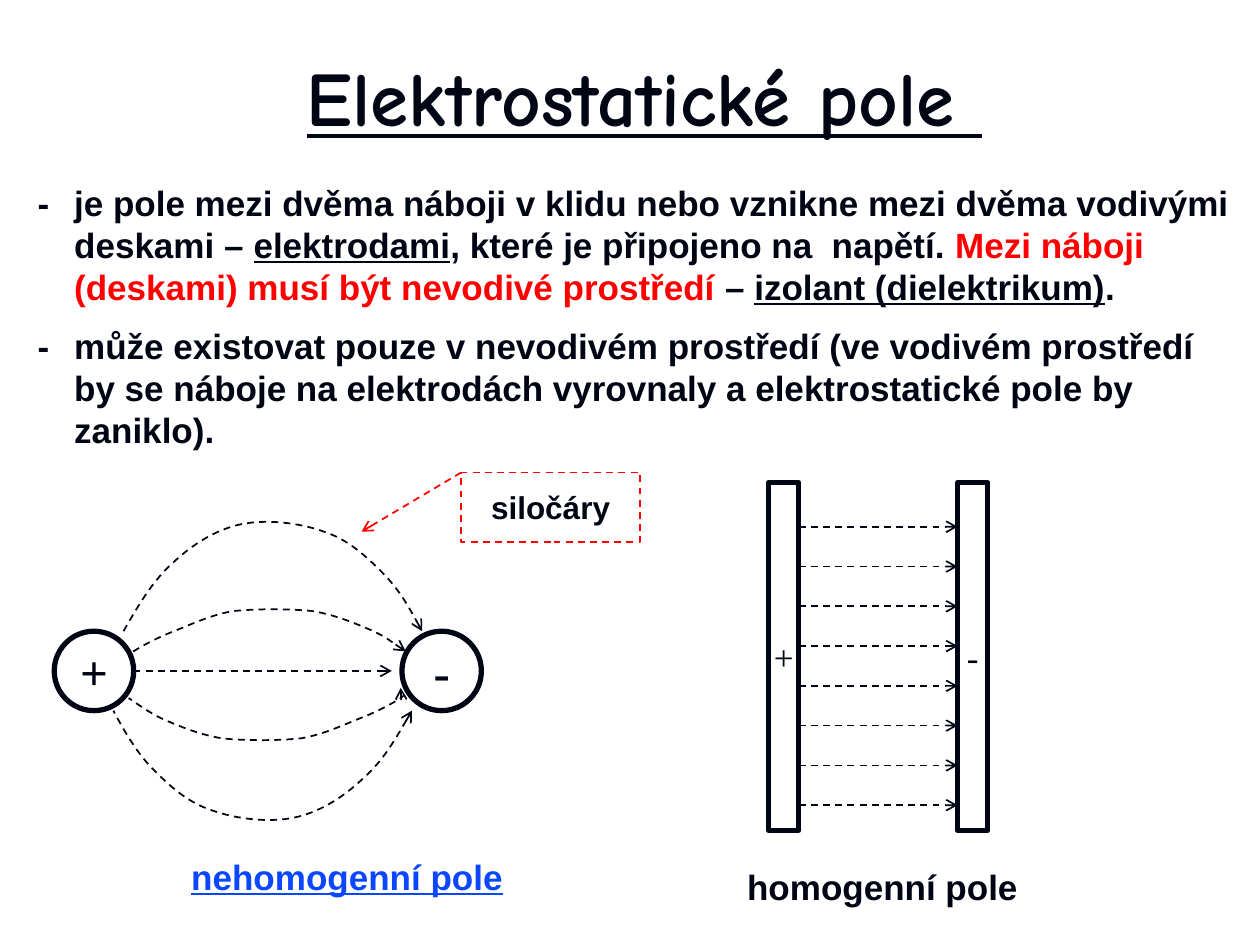
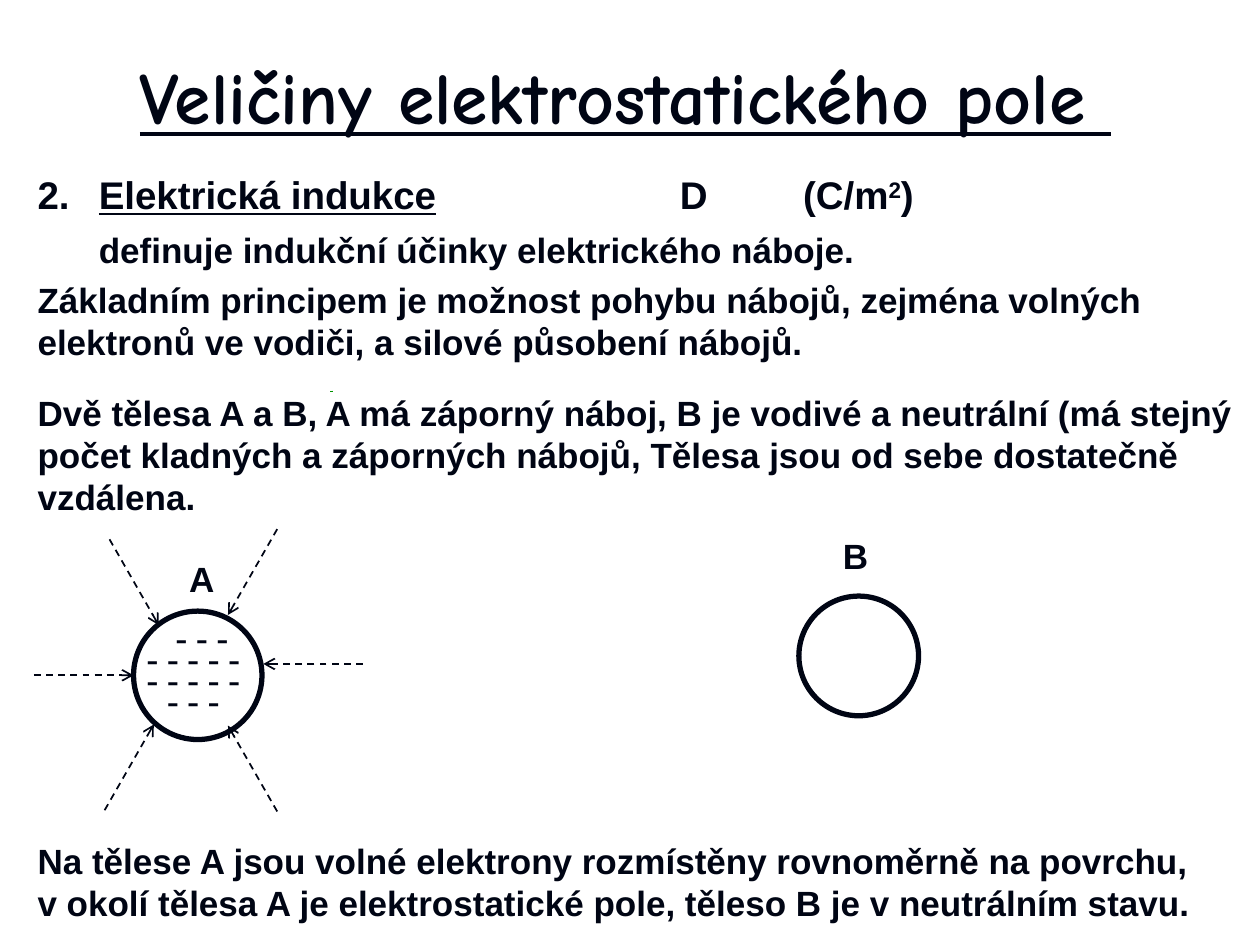
from lxml import etree
from pptx import Presentation
from pptx.dml.color import RGBColor
from pptx.enum.dml import MSO_LINE
from pptx.enum.shapes import MSO_CONNECTOR, MSO_SHAPE
from pptx.enum.text import MSO_ANCHOR, PP_ALIGN
from pptx.oxml.ns import qn
from pptx.util import Pt

DASH = MSO_LINE.DASH
STRAIGHT = MSO_CONNECTOR.STRAIGHT
OVAL, RECT = MSO_SHAPE.OVAL, MSO_SHAPE.RECTANGLE
MIDDLE, TOP = MSO_ANCHOR.MIDDLE, MSO_ANCHOR.TOP
CENTER, LEFT = PP_ALIGN.CENTER, PP_ALIGN.LEFT

COLORS = {"ink": "000514", "red": "FF0000", "blue": "0A47FE", "green": "009300"}
BODY = {"name": "Arial", "size": 20, "bold": True, "color": "ink"}
SIGN = {**BODY, "name": "Times New Roman", "size": 28}
PLATE = {**SIGN, "size": 20, "bold": False}
TITLE = {**BODY, "name": "Comic Neue", "size": 44, "underline": True}
UNDER = {"underline": True}
TIGHT = 2.9
HANGING = 20.9

OUTER_LINE = [
    (70.6, 360.7), (79.2, 345.6), (87.8, 331.2), (99.4, 321.1),
    (110.2, 311), (123.8, 302.4), (138.2, 299.5),
    (152.6, 296.6), (171.4, 298.8), (185, 303.8),
    (198.7, 308.2), (208.8, 317.5), (218.2, 326.9),
    (227.5, 336.2), (234.7, 348.5), (241.2, 360.7)]
INNER_LINE = [
    (76.3, 378), (74.9, 376.6), (72.7, 375.1), (76.3, 372.2),
    (80.6, 369.4), (90, 364.3), (99.4, 360.7),
    (108.7, 357.1), (120.2, 351.4), (133.2, 349.2),
    (146.2, 347.8), (165.6, 347.8), (178.6, 349.2),
    (191.5, 351.4), (201.6, 355.7), (210.2, 359.3),
    (218.9, 362.9), (227.5, 369.4), (231.8, 372.2)]


class Deck:
    """Holds the style and the current slide, and draws each kind of element."""

    def __init__(self):
        self.prs = Presentation()
        self.prs.slide_width, self.prs.slide_height = Pt(720), Pt(540)
        self.s = None

    def slide(self, title, left, width, size):
        self.s = self.prs.slides.add_slide(self.prs.slide_layouts[5])
        sp = self.s.shapes.title
        self.place(sp, left, 20.2, width, 68.4)
        self.fill_text(sp, [[title]], {**TITLE, "size": size}, CENTER, MIDDLE)

    def place(self, sp, *box):
        for name, value in zip(("left", "top", "width", "height"), box):
            setattr(sp, name, Pt(value))

    def style_run(self, r, fmt):
        for key, value in fmt.items():
            if key == "color":
                r.font.color.rgb = RGBColor.from_string(COLORS[value])
            elif key == "size":
                r.font.size = Pt(value)
            elif key == "baseline":
                r._r.get_or_add_rPr().set("baseline", str(value * 1000))
            else:
                setattr(r.font, key, value)

    def fill_text(self, sp, paragraphs, fmt, align=LEFT, anchor=TOP, wrap=True,
                  inset=None, before=(), spacing=None, hanging=0, tabs=()):
        tf = sp.text_frame
        tf.word_wrap, tf.vertical_anchor = wrap, anchor
        if inset is not None:
            for side in ("left", "top", "right", "bottom"):
                setattr(tf, "margin_" + side, Pt(inset))
        for i, runs in enumerate(paragraphs):
            p = tf.add_paragraph() if i else tf.paragraphs[0]
            p.alignment = align
            if spacing:
                p.line_spacing = spacing
            if i and before:
                p.space_before = Pt(before[i - 1])
            pPr = p._p.get_or_add_pPr()
            if hanging:
                pPr.set("marL", str(Pt(hanging)))
                pPr.set("indent", str(-Pt(hanging)))
            if tabs:
                tab_list = etree.SubElement(pPr, qn("a:tabLst"))
                for pos in tabs:
                    etree.SubElement(tab_list, qn("a:tab"), pos=str(Pt(pos)), algn="l")
            for run in runs:
                text, extra = (run, {}) if isinstance(run, str) else run
                r = p.add_run()
                r.text = text
                self.style_run(r, {**fmt, **extra})

    def text(self, box, paragraphs, fmt=BODY, **layout):
        sp = self.s.shapes.add_textbox(*map(Pt, box))
        self.fill_text(sp, paragraphs, fmt, **layout)

    def outline(self, sp, color, width, dashed=False, arrow=None):
        sp.line.color.rgb = RGBColor.from_string(COLORS[color])
        sp.line.width = Pt(width)
        if dashed:
            sp.line.dash_style = DASH
        if arrow:
            ln = sp._element.spPr.find(qn("a:ln"))
            etree.SubElement(ln, qn(f"a:{arrow}End"), type="arrow")

    def shape(self, kind, box, paragraphs=(), fmt=SIGN, color="ink", width=3,
              dashed=False, **layout):
        sp = self.s.shapes.add_shape(kind, *map(Pt, box))
        sp.shadow.inherit = False
        sp.fill.background()
        self.outline(sp, color, width, dashed)
        if paragraphs:
            self.fill_text(sp, paragraphs, fmt, CENTER, MIDDLE, False, **layout)

    def line(self, start, end, color="ink", width=1, dashed=True, arrow="tail"):
        cn = self.s.shapes.add_connector(STRAIGHT, *map(Pt, start + end))
        self.outline(cn, color, width, dashed, arrow)
        etree.SubElement(cn._element.spPr, qn("a:effectLst"))

    def curve(self, points, arrow="tail"):
        start, *rest = [(Pt(x), Pt(y)) for x, y in points]
        fb = self.s.shapes.build_freeform(*start)
        fb.add_line_segments(rest, close=False)
        sp = fb.convert_to_shape()
        outline = sp._element.find(".//" + qn("a:path"))
        segments = outline.findall(qn("a:lnTo"))
        for i in range(0, len(segments), 3):
            bezier = etree.SubElement(outline, qn("a:cubicBezTo"))
            for segment in segments[i:i + 3]:
                bezier.append(segment[0])
                outline.remove(segment)
        sp.shadow.inherit = False
        sp.fill.background()
        self.outline(sp, "ink", 1, True, arrow)


def turned(points, sum_x, sum_y):
    """Return the points after a half turn."""
    return [(sum_x - x, sum_y - y) for x, y in points]


def field_slide(d):
    """Build the slide on the electrostatic field."""
    d.slide("Elektrostatické pole ", 115.9, 504.7, 44)
    d.text((14.4, 100.1, 697.7, 163.4), [
        ["-\tje pole mezi dvěma náboji v klidu nebo vznikne mezi dvěma vodivými deskami – ",
         ("elektrodami", UNDER), ", které je připojeno na  napětí. ",
         ("Mezi náboji (deskami) musí být nevodivé prostředí ", {"color": "red"}),
         "– ", ("izolant (dielektrikum)", UNDER), "."],
        ["-\tmůže existovat pouze v nevodivém prostředí (ve vodivém prostředí by se "
         "náboje na elektrodách vyrovnaly a elektrostatické pole by zaniklo)."]],
        before=[10], hanging=HANGING)

    for sign, charge_x, plate_x in (("+", 31, 439.2), ("-", 229.7, 547.2)):
        d.shape(OVAL, (charge_x, 360.7, 45.4, 45.4), [[sign]])
        d.shape(RECT, (plate_x, 275.8, 17.3, 198.7), [[sign]], PLATE, inset=TIGHT)
    d.line((76.3, 383.4), (223.9, 383.4))
    for points, sums in ((INNER_LINE, (305.3, 771.1)), (OUTER_LINE, (306, 766.8))):
        d.curve(points)
        d.curve(turned(points, *sums), arrow="head")
    for i in range(8):
        y = 301 + i * 22.73
        d.line((456.5, y), (547.2, y))

    d.text((102.2, 485.3, 207.4, 31), [["nehomogenní pole"]],
           {**BODY, **UNDER, "color": "blue"})
    d.text((419.8, 491, 178.6, 31), [["homogenní pole"]])
    d.line((263.5, 270), (206.6, 303.8), "red")
    d.shape(RECT, (263.5, 270, 102.2, 39.6), [["siločáry"]], {**BODY, "size": 18},
            "red", 1, True)


def induction_slide(d):
    """Build the slide on electric induction."""
    d.slide("Veličiny elektrostatického pole ", 14.4, 686.2, 42)
    large = {"size": 22}
    d.text((14.4, 94.3, 686.2, 119.5), [
        [("2.\t", large), ("Elektrická indukce", {**large, **UNDER}),
         ("\tD\t(C/m", large), ("2", {**large, "baseline": 30}), (")", large)],
        [("\t", large), "definuje indukční účinky elektrického náboje."],
        ["Základním principem je možnost pohybu nábojů, zejména volných elektronů "
         "ve vodiči, a silové působení nábojů."]],
        before=[4.4, 4], tabs=(35, 367, 437.5))
    d.text((14.4, 220.3, 697.7, 79.2), [[
        "Dvě tělesa A a B, A má záporný náboj, B je vodivé a neutrální (má stejný "
        "počet kladných a záporných nábojů, Tělesa jsou od sebe dostatečně vzdálena."]])
    d.text((14.4, 475.9, 686.2, 55.4), [[
        "Na tělese A jsou volné elektrony rozmístěny rovnoměrně na povrchu, "
        "v okolí tělesa A je elektrostatické pole, těleso B je v neutrálním stavu."]])

    for name, x, y in (("B", 478.8, 302.4), ("A", 105.1, 315.4)):
        d.text((x, y, 20.2, 29.5), [[name]], wrap=False, inset=TIGHT)
    d.shape(OVAL, (456.5, 340.6, 68.4, 68.4))
    d.shape(OVAL, (76.3, 349.2, 73.4, 73.4),
            [[" - - -"], ["- - - - - "], ["- - - - - "], ["- - - "]],
            {**SIGN, "size": 20}, spacing=0.5)
    for start, (dx, dy) in (
            ((19.4, 385.9), (56.9, 0)), ((62.6, 308.2), (28.1, 49)),
            ((158.4, 302.4), (-28.1, 49)), ((207.4, 379.4), (-56.9, 0)),
            ((158.4, 463.7), (-28.1, -49)), ((59.8, 463), (28.1, -49))):
        d.line(start, (start[0] + dx, start[1] + dy))
    d.line((189.4, 223.2), (189.4, 223.6), "green", 1.5, False, None)


def main():
    """Build both slides and save them."""
    d = Deck()
    field_slide(d)
    induction_slide(d)
    d.prs.save("out.pptx")


if __name__ == "__main__":
    main()
